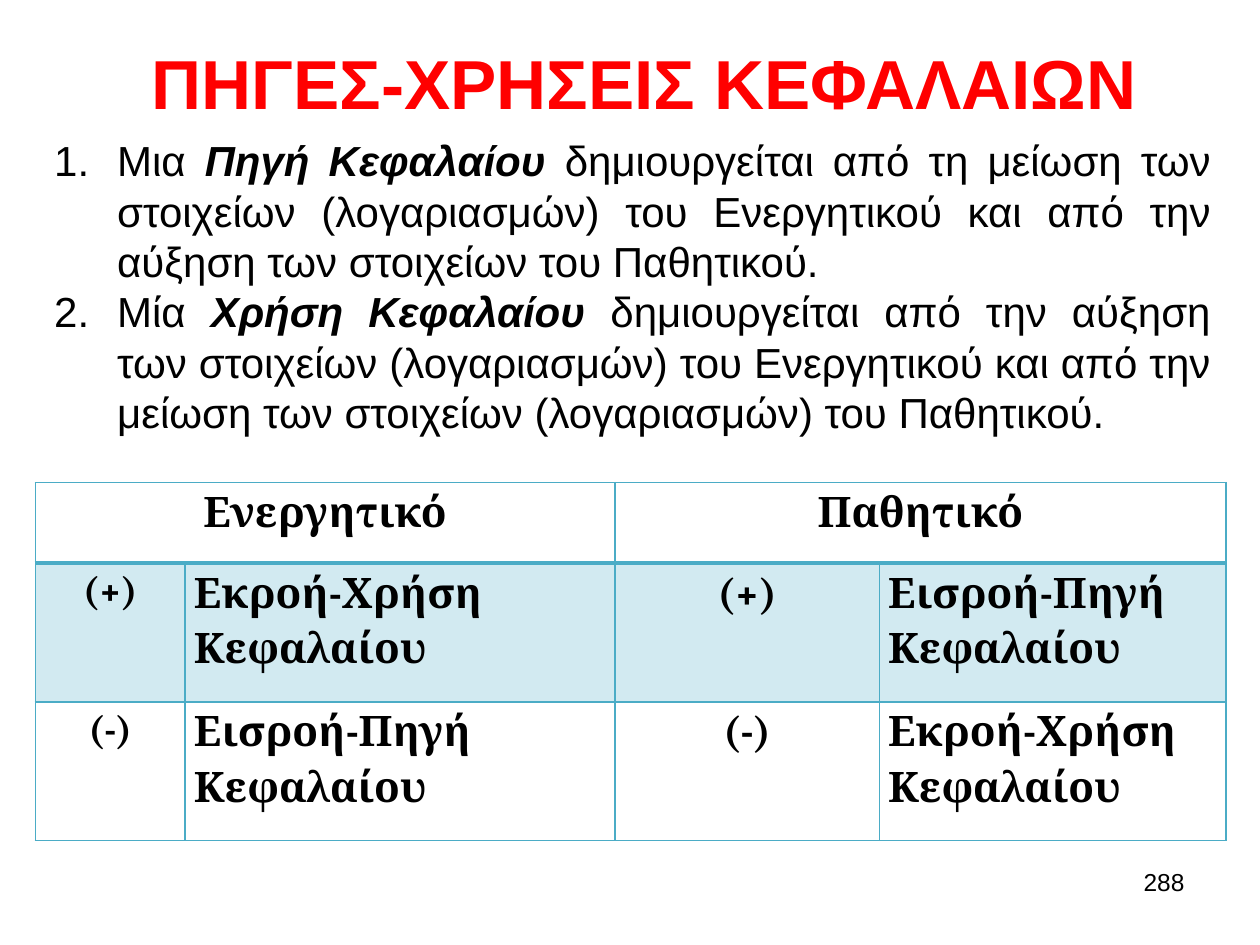
from lxml import etree
from pptx import Presentation
from pptx.dml.color import RGBColor
from pptx.enum.text import MSO_ANCHOR, PP_ALIGN
from pptx.oxml.ns import qn
from pptx.util import Inches, Pt

LEFT, MID, RIGHT, JUST = PP_ALIGN.LEFT, PP_ALIGN.CENTER, PP_ALIGN.RIGHT, PP_ALIGN.JUSTIFY
CENTRE = MSO_ANCHOR.MIDDLE
BLACK, RED, TEAL, PALE = "000000", "FF0000", "4BACC6", "D2EAF1"
USE, GAIN = "Εκροή-Χρήση Κεφαλαίου", "Εισροή-Πηγή Κεφαλαίου"
POINTS = [
    ("Μια ", "Πηγή Κεφαλαίου",
     " δημιουργείται από τη μείωση των στοιχείων (λογαριασμών) του Ενεργητικού"
     " και από την αύξηση των στοιχείων του Παθητικού."),
    ("Μία ", "Χρήση Κεφαλαίου",
     " δημιουργείται από την αύξηση των στοιχείων (λογαριασμών) του Ενεργητικού"
     " και από την μείωση των στοιχείων (λογαριασμών) του Παθητικού."),
]
HEADS = ["Ενεργητικό", "Παθητικό"]
ROWS = [("(+)", USE, "(+)", GAIN), ("(-)", GAIN, "(-)", USE)]
WIDTHS, HEIGHTS = [1.19, 3.41, 2.1, 2.75], [0.64, 1.1, 1.1]


def color(code):
    """Turn a hex string into a colour."""
    return RGBColor.from_string(code)


def add_run(para, text, size, font="Arial", code=BLACK, bold=False, slant=False):
    """Add one styled run to a paragraph."""
    run = para.add_run()
    run.text = text
    face = run.font
    face.name, face.size, face.bold, face.italic = font, Pt(size), bold, slant
    face.color.rgb = color(code)


def add_box(slide, box):
    """Add a wrapping text box and return its frame."""
    frame = slide.shapes.add_textbox(*map(Inches, box)).text_frame
    frame.word_wrap = True
    return frame


def add_title(slide, box):
    """Place the red heading."""
    frame = add_box(slide, box)
    frame.vertical_anchor = CENTRE
    para = frame.paragraphs[0]
    para.alignment = MID
    add_run(para, "ΠΗΓΕΣ-ΧΡΗΣΕΙΣ ΚΕΦΑΛΑΙΩΝ", 39.6, code=RED, bold=True)


def add_list(slide, box):
    """Place the numbered definitions."""
    frame = add_box(slide, box)
    frame.margin_left = frame.margin_right = 0
    frame.margin_top = frame.margin_bottom = 0
    for i, (lead, term, rest) in enumerate(POINTS):
        para = frame.add_paragraph() if i else frame.paragraphs[0]
        para.alignment = JUST
        props = para._p.get_or_add_pPr()
        props.set("marL", str(Inches(0.5)))
        props.set("indent", str(-Inches(0.5)))
        etree.SubElement(props, qn("a:buFont"), typeface="+mj-lt")
        etree.SubElement(props, qn("a:buAutoNum"), type="arabicPeriod")
        add_run(para, lead, 24)
        add_run(para, term, 24, bold=True, slant=True)
        add_run(para, rest, 24)


def set_edges(cell, top, base):
    """Draw the four cell borders, with given top and bottom widths."""
    props = cell._tc.get_or_add_tcPr()
    edges = [("L", 1), ("R", 1), ("T", top), ("B", base)]
    for i, (side, width) in enumerate(edges):
        line = etree.Element(qn(f"a:ln{side}"), w=str(Pt(width)))
        fill = etree.SubElement(line, qn("a:solidFill"))
        etree.SubElement(fill, qn("a:srgbClr"), val=TEAL)
        props.insert(i, line)


def fill_cell(cell, text, size, align):
    """Write the text of one table cell."""
    para = cell.text_frame.paragraphs[0]
    para.alignment, para.line_spacing, para.space_after = align, 1.15, Pt(10)
    add_run(para, text, size, "Cambria", bold=True)


def add_grid(slide, box):
    """Place the table of sources and uses."""
    grid = slide.shapes.add_table(3, 4, *map(Inches, box)).table
    for col, width in zip(grid.columns, WIDTHS):
        col.width = Inches(width)
    for r, height in enumerate(HEIGHTS):
        grid.rows[r].height = Inches(height)
        for c in range(len(WIDTHS)):
            cell = grid.cell(r, c)
            cell.margin_left = cell.margin_right = Inches(0.07)
            cell.margin_top = cell.margin_bottom = 0
            if r == 1:
                cell.fill.solid()
                cell.fill.fore_color.rgb = color(PALE)
            else:
                cell.fill.background()
            set_edges(cell, 2.25 if r == 1 else 1, 2.25 if r == 0 else 1)
    for i, head in enumerate(HEADS):
        cell = grid.cell(0, 2 * i)
        cell.merge(grid.cell(0, 2 * i + 1))
        fill_cell(cell, head, 24, MID)
    for r, row in enumerate(ROWS, 1):
        for c, text in enumerate(row):
            fill_cell(grid.cell(r, c), text, 24 if c else 22, JUST if c % 2 else MID)


def add_number(slide, box):
    """Place the page number."""
    para = add_box(slide, box).paragraphs[0]
    para.alignment = RIGHT
    add_run(para, "288", 14)


def main():
    """Build and save the slide."""
    deck = Presentation()
    deck.slide_width, deck.slide_height = Inches(10), Inches(7.5)
    slide = deck.slides.add_slide(deck.slide_layouts[6])
    add_title(slide, (0.91, 0.29, 8.41, 0.71))
    add_list(slide, (0.43, 1.07, 9.18, 2.6))
    add_grid(slide, (0.28, 3.83, sum(WIDTHS), sum(HEIGHTS)))
    add_number(slide, (7.17, 6.83, 2.33, 0.52))
    deck.save("out.pptx")


if __name__ == "__main__":
    main()
